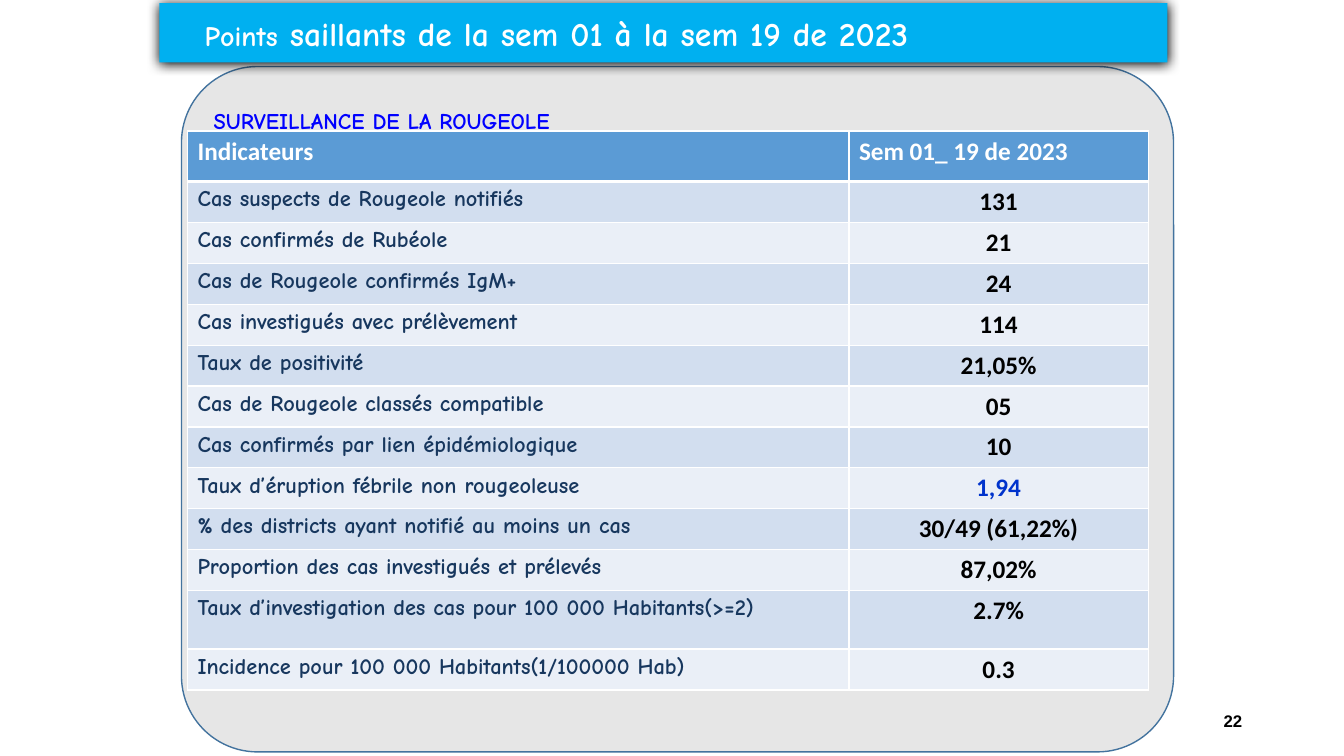
from lxml import etree
from pptx import Presentation
from pptx.dml.color import RGBColor
from pptx.enum import shapes, text
from pptx.oxml import parse_xml
from pptx.oxml.ns import nsdecls, qn
from pptx.util import Inches, Pt

WHITE = RGBColor(0xFF, 0xFF, 0xFF)
BLACK = RGBColor(0, 0, 0)
PANEL_GREY = RGBColor(0xE6, 0xE6, 0xE6)
PANEL_LINE = RGBColor(0x43, 0x73, 0x9E)
BANNER_BLUE = RGBColor(0x00, 0xB0, 0xF0)
HEADING_BLUE = RGBColor(0x00, 0x00, 0xFF)
HEADER_BLUE = RGBColor(0x5B, 0x9B, 0xD5)
LABEL_NAVY = RGBColor(0x17, 0x37, 0x5E)
ACCENT_BLUE = RGBColor(0x00, 0x33, 0xCC)
BANDS = (RGBColor(0xD2, 0xDE, 0xEF), RGBColor(0xEA, 0xEF, 0xF7))

HEADERS = ("Indicateurs", "Sem 01_ 19 de 2023")
INDICATORS = (
    ("Cas suspects de Rougeole notifiés", "131"),
    ("Cas confirmés de Rubéole", "21"),
    ("Cas de Rougeole confirmés IgM+", "24"),
    ("Cas investigués avec prélèvement", "114"),
    ("Taux de positivité", "21,05%"),
    ("Cas de Rougeole classés compatible", "05"),
    ("Cas confirmés par lien épidémiologique", "10"),
    ("Taux d’éruption fébrile non rougeoleuse", "1,94"),
    ("% des districts ayant notifié au moins un cas", "30/49 (61,22%)"),
    ("Proportion des cas investigués et prélevés", "87,02%"),
    ("Taux d’investigation des cas pour 100 000 Habitants(>=2)", "2.7%"),
    ("Incidence pour 100 000 Habitants(1/100000 Hab)", "0.3"),
)
ACCENT_ROW, TALL_ROW = 8, 11


def set_font(font, name, size, color, bold=False):
    """Apply name, size, colour and weight to a font."""
    font.name, font.size, font.bold = name, Pt(size), bold
    font.color.rgb = color


def add_panel(slide, left, top, width, height):
    """Draw the rounded grey panel with its heading."""
    panel = slide.shapes.add_shape(shapes.MSO_SHAPE.ROUNDED_RECTANGLE, left, top, width, height)
    panel.adjustments[0] = 0.111
    panel.shadow.inherit = False
    panel.fill.solid()
    panel.fill.fore_color.rgb = PANEL_GREY
    panel.line.color.rgb = PANEL_LINE
    panel.line.width = Pt(1)
    panel.text_frame.vertical_anchor = text.MSO_ANCHOR.TOP
    paragraph = panel.text_frame.paragraphs[0]
    paragraph.text = "SURVEILLANCE DE LA ROUGEOLE"
    paragraph.alignment = text.PP_ALIGN.LEFT
    paragraph.line_spacing = 1.5
    paragraph.space_before = Pt(2)
    set_font(paragraph.font, "Comic Neue", 16, HEADING_BLUE, True)


def add_banner(slide, left, top, width, height):
    """Draw the blue title banner with a soft shadow."""
    banner = slide.shapes.add_shape(shapes.MSO_SHAPE.RECTANGLE, left, top, width, height)
    banner.fill.solid()
    banner.fill.fore_color.rgb = BANNER_BLUE
    banner.line.fill.background()
    banner.shadow.inherit = False
    effects = banner._element.spPr.find(qn("a:effectLst"))
    effects.append(parse_xml(
        f'<a:outerShdw {nsdecls("a")} blurRad="{Pt(8.5)}" dist="{Pt(1)}" dir="5400000">'
        '<a:srgbClr val="000000"/></a:outerShdw>'))
    frame = banner.text_frame
    frame.margin_left = Inches(0.45)
    frame.vertical_anchor = text.MSO_ANCHOR.MIDDLE
    paragraph = frame.paragraphs[0]
    paragraph.alignment = text.PP_ALIGN.LEFT
    for words, size in (("Points", 20), (" saillants de la sem 01 à la sem 19 de 2023", 24)):
        run = paragraph.add_run()
        run.text = words
        set_font(run.font, "Comic Neue", size, WHITE, True)


def set_borders(cell, bottom_width):
    """Give a cell white borders, with its own bottom width."""
    properties = cell._tc.get_or_add_tcPr()
    for position, side in enumerate(("lnL", "lnR", "lnT", "lnB")):
        border = etree.Element(qn(f"a:{side}"), w=str(Pt(bottom_width if side == "lnB" else 1)))
        fill = etree.SubElement(border, qn("a:solidFill"))
        etree.SubElement(fill, qn("a:srgbClr"), val=str(WHITE))
        properties.insert(position, border)


def fill_cell(cell, words, fill, font, centred=False, bottom_width=1):
    """Write one table cell with its fill, font and borders."""
    cell.fill.solid()
    cell.fill.fore_color.rgb = fill
    set_borders(cell, bottom_width)
    paragraph = cell.text_frame.paragraphs[0]
    paragraph.text = words
    paragraph.alignment = text.PP_ALIGN.CENTER if centred else text.PP_ALIGN.LEFT
    set_font(paragraph.font, *font)


def add_indicator_table(slide, left, top, width, height):
    """Place the table of indicators and values."""
    table = slide.shapes.add_table(len(INDICATORS) + 1, 2, left, top, width, height).table
    table.columns[0].width = Inches(6.56)
    table.columns[1].width = width - Inches(6.56)
    special_heights = {0: 0.5, TALL_ROW: 0.58}
    for index, row in enumerate(table.rows):
        row.height = Inches(special_heights.get(index, 0.406))
    for column, words in enumerate(HEADERS):
        fill_cell(table.cell(0, column), words, HEADER_BLUE, ("Calibri", 18, WHITE, True), bottom_width=3)
    for index, (label, value) in enumerate(INDICATORS, 1):
        band = BANDS[(index - 1) % 2]
        value_color = ACCENT_BLUE if index == ACCENT_ROW else BLACK
        fill_cell(table.cell(index, 0), label, band, ("Comic Neue", 16, LABEL_NAVY, True))
        fill_cell(table.cell(index, 1), value, band, ("Calibri", 18, value_color, True), centred=True)


def add_slide_number(slide, left, top, width, height):
    """Write the slide number at the right of its box."""
    frame = slide.shapes.add_textbox(left, top, width, height).text_frame
    frame.word_wrap = True
    frame.vertical_anchor = text.MSO_ANCHOR.MIDDLE
    paragraph = frame.paragraphs[0]
    paragraph.text = "22"
    paragraph.alignment = text.PP_ALIGN.RIGHT
    set_font(paragraph.font, "Arial", 12, BLACK, True)


def main():
    """Build the slide and save it."""
    presentation = Presentation()
    presentation.slide_width, presentation.slide_height = Inches(13.33), Inches(7.5)
    slide = presentation.slides.add_slide(presentation.slide_layouts[6])
    add_slide_number(slide, Inches(9.42), Inches(6.95), Inches(3), Inches(0.4))
    add_panel(slide, Inches(1.8), Inches(0.66), Inches(9.84), Inches(6.8))
    add_banner(slide, Inches(1.58), Inches(0.03), Inches(10), Inches(0.59))
    add_indicator_table(slide, Inches(1.86), Inches(1.3), Inches(9.53), Inches(5.54))
    presentation.save("out.pptx")


if __name__ == "__main__":
    main()
